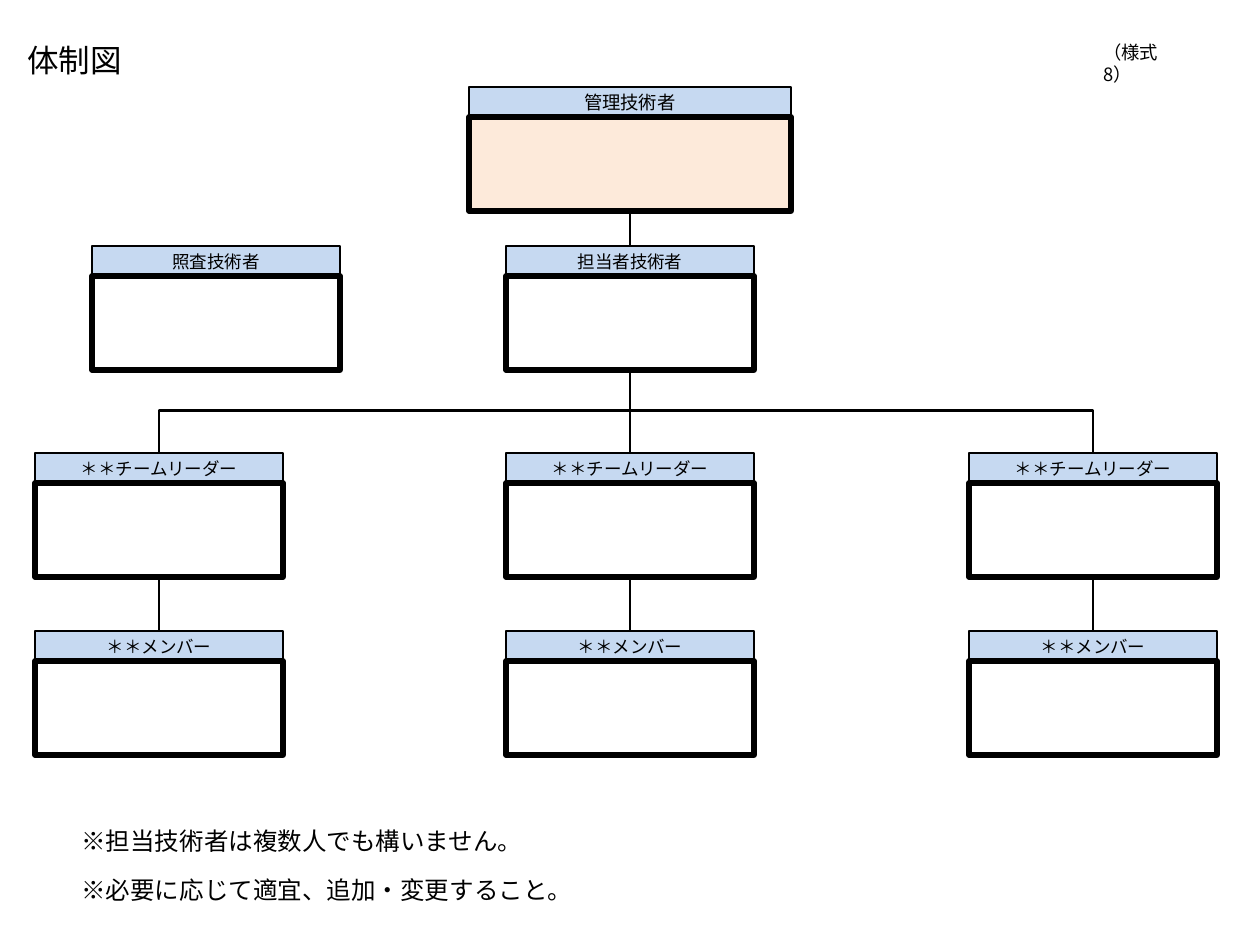
from dataclasses import dataclass
from lxml.etree import SubElement
from pptx import Presentation
from pptx.dml.color import RGBColor
from pptx.enum.shapes import MSO_CONNECTOR, MSO_SHAPE
from pptx.enum.text import MSO_ANCHOR, PP_ALIGN
from pptx.oxml.ns import qn
from pptx.util import Emu, Pt


@dataclass(frozen=True)
class Theme:
    font: str = "Noto Sans CJK JP"
    ink: str = "000000"
    head: str = "C6D9F1"
    chief: str = "FDEADA"
    plain: str = "FFFFFF"
    title: float = 18
    note: float = 14
    label: float = 10.5
    small: float = 10
    thin: float = 0.75
    link: float = 1.5
    thick: float = 3


def px(n):
    return Emu(round(n * 914400 / 126))


class Chart:
    HEAD, BODY = 30, 94

    def __init__(self, slide, theme):
        self.slide, self.theme = slide, theme

    def label(self, frame, text, size, wrap=False):
        frame.word_wrap = wrap
        para = frame.paragraphs[0]
        para.text = text
        para.font.size = Pt(size)
        para.font.name = self.theme.font
        para.font.color.rgb = RGBColor.from_string(self.theme.ink)
        # East Asian glyphs take their own typeface
        for props in para._p.iter(qn("a:defRPr"), qn("a:rPr")):
            SubElement(props, qn("a:ea")).set("typeface", self.theme.font)
        return para

    def text(self, x, y, w, h, text, size, wrap=False):
        box = self.slide.shapes.add_textbox(px(x), px(y), px(w), px(h))
        self.label(box.text_frame, text, size, wrap)

    def rect(self, group, x, y, w, h, fill, width):
        box = group.shapes.add_shape(MSO_SHAPE.RECTANGLE, px(x), px(y), px(w), px(h))
        box.shadow.inherit = False
        box.fill.solid()
        box.fill.fore_color.rgb = RGBColor.from_string(fill)
        self.stroke(box, width)
        return box

    def stroke(self, shape, width):
        shape.line.color.rgb = RGBColor.from_string(self.theme.ink)
        shape.line.width = Pt(width)

    def card(self, mid, y, text, w=248, size=None, fill=None):
        """Label strip above an empty name box, centred on mid."""
        t = self.theme
        group = self.slide.shapes.add_group_shape()
        x = mid - w // 2
        head = self.rect(group, x, y, w, self.HEAD, t.head, t.thin)
        head.text_frame.vertical_anchor = MSO_ANCHOR.MIDDLE
        para = self.label(head.text_frame, text, size or t.small)
        para.alignment = PP_ALIGN.CENTER
        self.rect(group, x, y + self.HEAD, w, self.BODY, fill or t.plain, t.thick)

    def line(self, x1, y1, x2, y2, kind=MSO_CONNECTOR.STRAIGHT):
        link = self.slide.shapes.add_connector(kind, px(x1), px(y1), px(x2), px(y2))
        self.stroke(link, self.theme.link)
        SubElement(link._element.spPr, qn("a:effectLst"))
        return link

    def elbow(self, x1, y1, x2, y2):
        """Down, across, down: an elbow turned by a quarter."""
        cx, cy = (x1 + x2) / 2, (y1 + y2) / 2
        dx, dy = abs(x2 - x1) / 2, (y2 - y1) / 2
        left = x2 < x1
        side = -dy if left else dy
        link = self.line(cx + side, cy - dx, cx - side, cy + dx, MSO_CONNECTOR.ELBOW)
        link._element.spPr.find(qn("a:xfrm")).set("rot", str((90 if left else 270) * 60000))


def main():
    deck = Presentation()
    deck.slide_width, deck.slide_height = px(1260), px(945)
    theme = Theme()
    chart = Chart(deck.slides.add_slide(deck.slide_layouts[6]), theme)
    tall = Chart.HEAD + Chart.BODY
    mid, teams = 630, (159, 630, 1093)
    top, staff, lead, crew = 87, 246, 453, 631

    # Links
    chart.line(mid, top + tall, mid, staff)
    chart.line(mid, staff + tall, mid, lead)
    for x in (teams[0], teams[2]):
        chart.elbow(mid, staff + tall - 2, x, lead)
    for x in teams:
        chart.line(x, lead + tall, x, crew)

    # Chief, checker and engineer
    chart.card(mid, top, "管理技術者", 322, theme.label, theme.chief)
    chart.card(216, staff, "照査技術者")
    chart.card(mid, staff, "担当者技術者")

    # Teams
    for x in teams:
        chart.card(x, lead, "＊＊チームリーダー")
        chart.card(x, crew, "＊＊メンバー")

    # Title, form number and notes
    chart.text(15, 35, 121, 50, "体制図", theme.title)
    chart.text(1091, 35, 105, 35, "（様式8）", theme.label, True)
    chart.text(69, 820, 720, 43, "※担当技術者は複数人でも構いません。", theme.note, True)
    chart.text(69, 869, 720, 43, "※必要に応じて適宜、追加・変更すること。", theme.note, True)
    deck.save("out.pptx")


if __name__ == "__main__":
    main()
